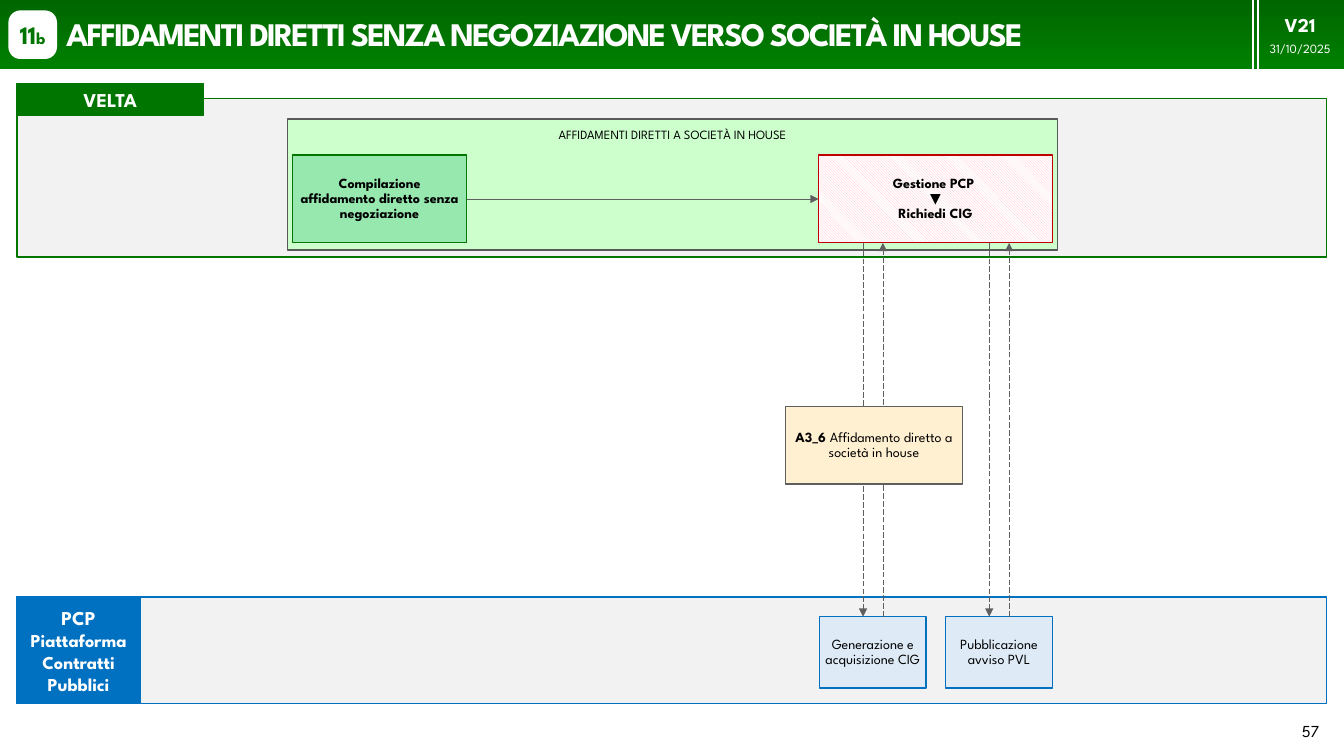
"""Build the process slide for direct awards to in-house companies."""
import lxml.etree
import pptx
import pptx.dml.color
import pptx.enum.dml
import pptx.enum.shapes
import pptx.enum.text
import pptx.oxml.ns
import pptx.util

Cm = pptx.util.Cm
Pt = pptx.util.Pt
ALIGN = pptx.enum.text.PP_ALIGN
ANCHOR = pptx.enum.text.MSO_ANCHOR
SHAPE = pptx.enum.shapes.MSO_SHAPE
FONT = "League Spartan"
COLORS = {
    name: pptx.dml.color.RGBColor.from_string(value)
    for name, value in {
        "white": "FFFFFF", "black": "000000", "band": "F2F2F2",
        "dark green": "006600", "light green": "008000", "green": "007600",
        "group": "CDFFCD", "mint": "97E8AE", "blue": "0070C0",
        "pale blue": "DEEBF7", "red": "C00000", "pink": "FFBFCC",
        "cream": "FFF0D1", "frame": "595959", "arrow": "5F5F5F",
    }.items()
}


def add_box(place, fill=None, line=None, paragraphs=(), color="black", kind=SHAPE.RECTANGLE,
            insets=(0.25, 0.13), anchor=ANCHOR.MIDDLE, align=ALIGN.CENTER, spacing=1.0):
    """Add a shape whose paragraphs are lists of (text, size, bold) runs."""
    shape = slide.shapes.add_shape(kind, *(Cm(length) for length in place))
    shape.shadow.inherit = False
    if fill:
        shape.fill.solid()
        shape.fill.fore_color.rgb = COLORS[fill]
    else:
        shape.fill.background()
    if line:
        shape.line.color.rgb = COLORS[line]
        shape.line.width = Pt(1)
    else:
        shape.line.fill.background()
    side, top = (Cm(inset) for inset in insets)
    frame_format = {"margin_left": side, "margin_right": side, "margin_top": top,
                    "margin_bottom": top, "vertical_anchor": anchor, "word_wrap": True}
    for name, value in frame_format.items():
        setattr(shape.text_frame, name, value)
    for index, runs in enumerate(paragraphs):
        frame = shape.text_frame
        paragraph = frame.add_paragraph() if index else frame.paragraphs[0]
        paragraph.alignment = align
        paragraph.line_spacing = spacing
        for text, size, bold in runs:
            run = paragraph.add_run()
            run.text = text
            for name, value in {"name": FONT, "size": Pt(size), "bold": bold}.items():
                setattr(run.font, name, value)
            run.font.color.rgb = COLORS[color]
    return shape


def add_line(start, end, color, width, arrow=False, dashed=False):
    """Add a straight line, with an arrowhead at its end if asked."""
    connector = slide.shapes.add_connector(
        pptx.enum.shapes.MSO_CONNECTOR.STRAIGHT, *(Cm(length) for length in start + end))
    connector.line.color.rgb = COLORS[color]
    connector.line.width = Pt(width)
    if dashed:
        connector.line.dash_style = pptx.enum.dml.MSO_LINE.LONG_DASH
    properties = connector.element.spPr
    if arrow:
        outline = properties.find(pptx.oxml.ns.qn("a:ln"))
        lxml.etree.SubElement(outline, pptx.oxml.ns.qn("a:tailEnd"), type="triangle")
    lxml.etree.SubElement(properties, pptx.oxml.ns.qn("a:effectLst"))
    return connector


presentation = pptx.Presentation()
presentation.slide_width = Cm(33.87)
presentation.slide_height = Cm(19.05)
slide = presentation.slides.add_slide(presentation.slide_layouts[5])

header = add_box((0, 0, 33.87, 1.75), "green")
header.fill.gradient()
header.fill.gradient_angle = 270
for stop, color in zip(header.fill.gradient_stops, ("dark green", "light green")):
    stop.color.rgb = COLORS[color]

title = slide.shapes.title
title_place = {"left": Cm(1.42), "top": Cm(0.2), "width": Cm(29.9), "height": Cm(1.4)}
for name, value in title_place.items():
    setattr(title, name, value)
title.text_frame.text = "AFFIDAMENTI DIRETTI SENZA NEGOZIAZIONE VERSO SOCIETÀ IN HOUSE"
title.text_frame.auto_size = pptx.enum.text.MSO_AUTO_SIZE.NONE
title.text_frame.vertical_anchor = ANCHOR.MIDDLE
title_paragraph = title.text_frame.paragraphs[0]
title_paragraph.alignment = ALIGN.LEFT
title_paragraph.line_spacing = 0.9
title_run = title_paragraph.runs[0]
for name, value in {"name": FONT, "size": Pt(23.5), "bold": True}.items():
    setattr(title_run.font, name, value)
title_run.font.color.rgb = COLORS["white"]
title_run.font._element.set("spc", "-140")
slide.shapes.element.append(title.element)

badge = add_box((0.23, 0.28, 1.19, 1.19), "white", "white",
                [[("11", 18, True), ("b", 12, True)]], "green",
                SHAPE.ROUNDED_RECTANGLE, (0, 0))
badge.adjustments[0] = 0.24
for left in (31.57, 31.7):
    add_line((left, 0), (left, 1.75), "white", 1.5)
version = add_box((31.7, 0, 2.13, 1.73), None, None,
                  [[("V21", 14, True)], [("31/10/2025", 9, False)]], "white", insets=(0, 0))
version.text_frame.paragraphs[0].space_after = Pt(3)

add_box((0.43, 15.04, 33, 2.69), "band", "blue")
add_box((0.43, 2.49, 33, 3.99), "band", "green")
add_box((0.43, 2.11, 4.7, 0.79), "green", "green", [[("VELTA", 14, True)]], "white")
add_box((0.43, 15.04, 3.1, 2.69), "blue", "blue",
        [[("PCP", 14, True), (" Piattaforma Contratti Pubblici", 13, True)]], "white")
add_box((7.24, 3, 19.41, 3.3), "group", "frame",
        [[("AFFIDAMENTI DIRETTI A SOCIETÀ IN HOUSE", 9, False)]],
        insets=(0.1, 0.2), anchor=ANCHOR.TOP)

step_format = {"insets": (0.1, 0.13), "spacing": 0.9}
drafting = add_box((7.37, 3.91, 4.39, 2.21), "mint", "green",
                   [[("Compilazione", 10, True)],
                    [("affidamento diretto senza negoziazione", 10, True)]], **step_format)
management = add_box((20.63, 3.91, 5.89, 2.21), "white", "red",
                     [[(text, 10, True)] for text in ("Gestione PCP ", "▼", "Richiedi CIG")],
                     **step_format)
management.fill.patterned()
management.fill.pattern = pptx.enum.dml.MSO_PATTERN.LIGHT_DOWNWARD_DIAGONAL
management.fill.fore_color.rgb = COLORS["pink"]
management.fill.back_color.rgb = COLORS["white"]
step_arrow = add_line((11.76, 5.01), (20.63, 5.01), "arrow", 0.5, arrow=True)
step_arrow.begin_connect(drafting, 3)
step_arrow.end_connect(management, 1)

services = {20.65: "Generazione e acquisizione CIG", 23.83: "Pubblicazione avviso PVL"}
for left, text in services.items():
    add_box((left, 15.54, 2.69, 1.8), "pale blue", "blue", [[(text, 10, False)]],
            insets=(0.05, 0.13), spacing=0.9)
    for offset, start, end in ((1.1, 6.12, 15.54), (1.6, 15.54, 6.12)):
        add_line((left + offset, start), (left + offset, end), "arrow", 0.5,
                 arrow=True, dashed=True)

add_box((19.79, 10.24, 4.47, 1.96), "cream", "arrow",
        [[("A3_6 ", 10, True), ("Affidamento diretto a società in house", 10, False)]],
        **step_format)
add_box((25.88, 17.91, 7.62, 1.02), None, None, [[("57", 12, False)]], align=ALIGN.RIGHT)

presentation.save("out.pptx")
